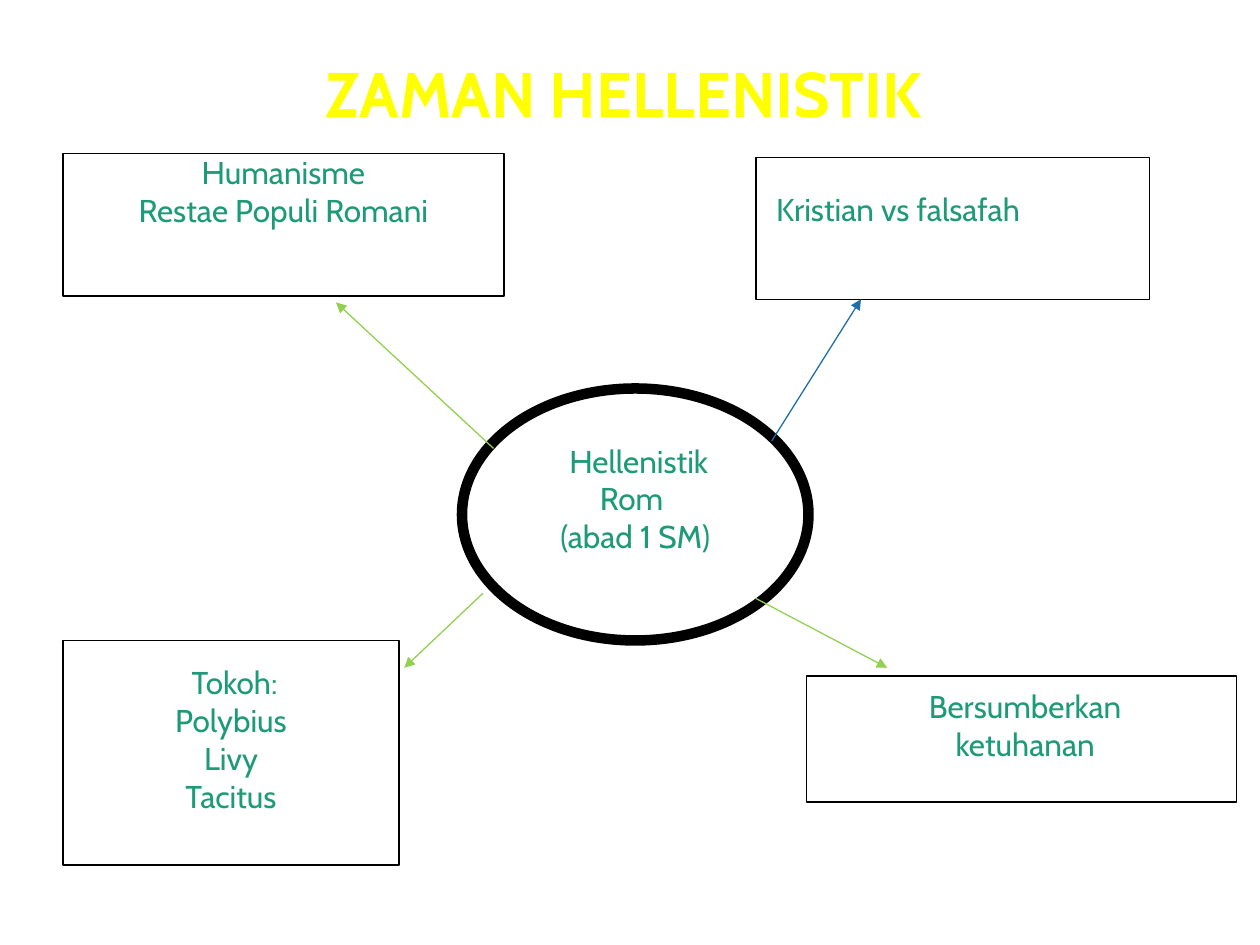
from dataclasses import dataclass

from lxml.etree import SubElement
from pptx import Presentation
from pptx.dml.color import RGBColor
from pptx.enum.shapes import MSO_CONNECTOR as Connector, MSO_SHAPE as Preset
from pptx.enum.text import MSO_ANCHOR as Anchor, MSO_AUTO_SIZE as AutoSize, PP_ALIGN as Align
from pptx.oxml.ns import qn
from pptx.util import Inches, Pt

COLUMNS, ROWS = 120, 90


@dataclass(frozen=True)
class Theme:
    font: str = "Cabin"
    title_size: int = 36
    body_size: int = 18
    title: str = "FFFF00"
    text: str = "1D9A78"
    paper: str = "FFFFFF"
    border: str = "000000"
    green: str = "92D050"
    blue: str = "1D6FA9"
    thin: float = 0.75
    thick: float = 6


@dataclass(frozen=True)
class Area:
    column: float
    row: float
    columns: float
    rows: float


@dataclass(frozen=True)
class Topic:
    area: Area
    lines: tuple[str, ...]
    top: float
    left: float = 0.1
    align: Align = Align.CENTER
    preset: Preset = Preset.RECTANGLE
    border: float = Theme.thin


@dataclass(frozen=True)
class Arrow:
    start: tuple[float, float]
    end: tuple[float, float]
    color: str = Theme.green


THEME = Theme()

TITLE = "ZAMAN HELLENISTIK"
TITLE_AREA = Area(29.8, 4.6, 67.7, 8.5)

TOPICS = (
    Topic(Area(44, 37, 33, 24), (" Hellenistik", "Rom ", "(abad 1 SM)"), 0.13,
          preset=Preset.OVAL, border=THEME.thick),
    Topic(Area(6, 14.6, 42, 13.6), ("Humanisme", "Restae Populi Romani"), 0),
    Topic(Area(72, 15, 37.5, 13.5), ("Kristian vs falsafah",), 0.26, 0.16, Align.LEFT),
    Topic(Area(6, 61, 32, 21.4), (" Tokoh:", "Polybius", "Livy", "Tacitus"), 0.18),
    Topic(Area(76.8, 64.4, 41, 12), (" Bersumberkan", " ketuhanan"), 0.09),
)

ARROWS = (
    Arrow((73.5, 42), (82, 28.5), THEME.blue),
    Arrow((46, 56.5), (38.5, 63.6)),
    Arrow((72, 57), (84.5, 63.6)),
    Arrow((47, 42.7), (32, 28.8)),
)


def apply(target, values: dict) -> None:
    for name, value in values.items():
        setattr(target, name, value)


def across(column: float) -> int:
    return Inches(10 * column / COLUMNS)


def down(row: float) -> int:
    return Inches(7.5 * row / ROWS)


def bounds(area: Area) -> dict:
    return {"left": across(area.column), "top": down(area.row),
            "width": across(area.columns), "height": down(area.rows)}


def write(frame, lines: tuple[str, ...], align: Align, size: int, color: str, bold: bool) -> None:
    frame.text = "\n".join(lines)
    for paragraph in frame.paragraphs:
        paragraph.alignment = align
        for run in paragraph.runs:
            apply(run.font, {"name": THEME.font, "size": Pt(size), "bold": bold})
            run.font.color.rgb = RGBColor.from_string(color)


def style_line(line, color: str, width: float) -> None:
    line.color.rgb = RGBColor.from_string(color)
    line.width = Pt(width)


def draw_title(slide) -> None:
    title = slide.shapes.title
    apply(title, bounds(TITLE_AREA))
    apply(title.text_frame, {"word_wrap": False, "vertical_anchor": Anchor.TOP,
                             "auto_size": AutoSize.SHAPE_TO_FIT_TEXT})
    write(title.text_frame, (TITLE,), Align.LEFT, THEME.title_size, THEME.title, True)


def draw_topic(slide, topic: Topic) -> None:
    shape = slide.shapes.add_shape(topic.preset, **bounds(topic.area))
    shape.shadow.inherit = False
    shape.fill.solid()
    shape.fill.fore_color.rgb = RGBColor.from_string(THEME.paper)
    style_line(shape.line, THEME.border, topic.border)
    apply(shape.text_frame, {"word_wrap": True, "vertical_anchor": Anchor.TOP,
                             "margin_top": Inches(topic.top),
                             "margin_left": Inches(topic.left)})
    write(shape.text_frame, topic.lines, topic.align, THEME.body_size, THEME.text, False)


def draw_arrow(slide, arrow: Arrow) -> None:
    (start_column, start_row), (end_column, end_row) = arrow.start, arrow.end
    connector = slide.shapes.add_connector(
        Connector.STRAIGHT, across(start_column), down(start_row),
        across(end_column), down(end_row))
    style_line(connector.line, arrow.color, THEME.thin)
    properties = connector._element.spPr
    SubElement(properties.find(qn("a:ln")), qn("a:tailEnd"), type="triangle")
    SubElement(properties, qn("a:effectLst"))


def main() -> None:
    presentation = Presentation()
    apply(presentation, {"slide_width": Inches(10), "slide_height": Inches(7.5)})
    slide = presentation.slides.add_slide(presentation.slide_layouts.get_by_name("Title Only"))
    draw_title(slide)
    for topic in TOPICS:
        draw_topic(slide, topic)
    for arrow in ARROWS:
        draw_arrow(slide, arrow)
    presentation.save("out.pptx")


if __name__ == "__main__":
    main()
